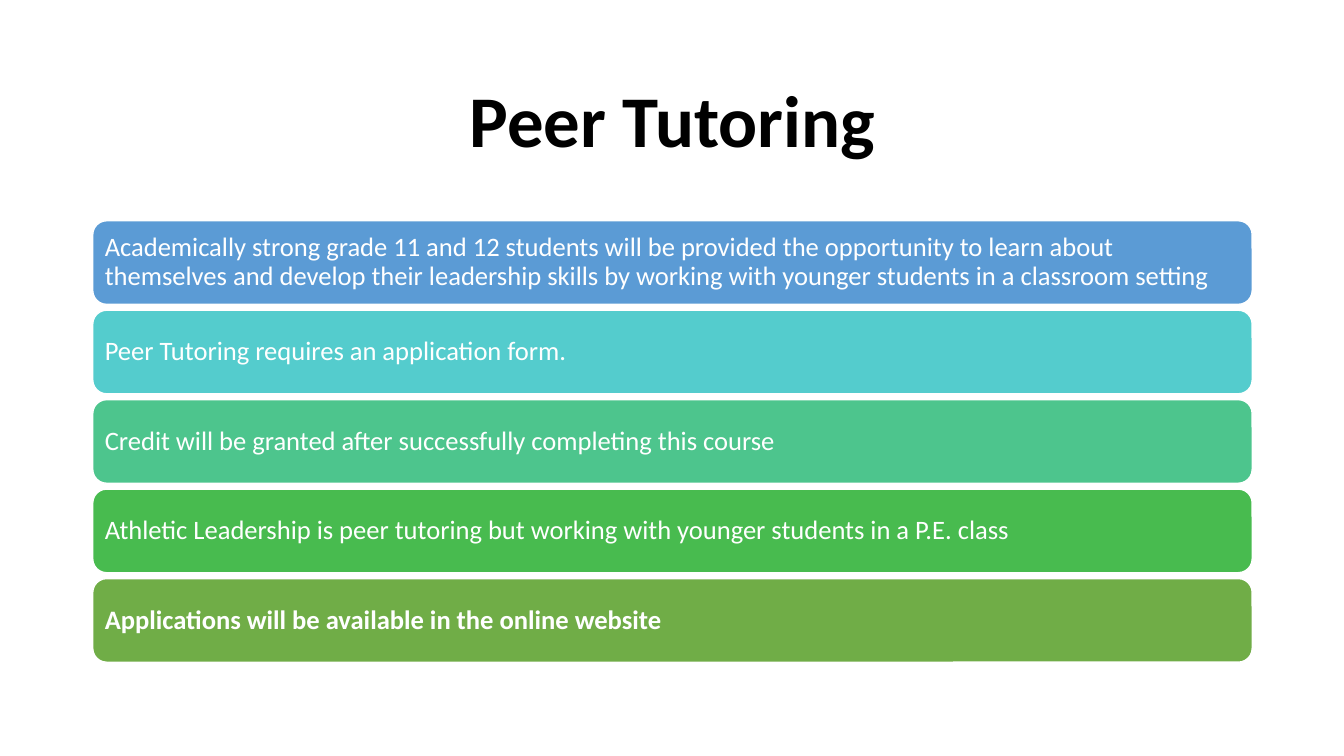
from pptx import Presentation
from pptx.dml.color import RGBColor
from pptx.enum.shapes import MSO_SHAPE
from pptx.enum.text import MSO_ANCHOR, PP_ALIGN
from pptx.util import Inches, Pt

BARS = [
    ("5B9BD5", "Academically strong grade 11 and 12 students will be provided the opportunity "
               "to learn about themselves and develop their leadership skills by working with "
               "younger students in a classroom setting"),
    ("54CCCD", "Peer Tutoring requires an application form."),
    ("4DC58D", "Credit will be granted after successfully completing this course"),
    ("48BB4F", "Athletic Leadership is peer tutoring but working with younger students in a P.E. class"),
    ("70AD47", "Applications will be available in the online website"),
]


def color(code):
    return RGBColor.from_string(code)


class Page:
    """Holds the slide, its style and the row grid that its bars sit on."""

    font = "Calibri"
    left, width = 0.92, 11.5
    grid_top, grid_bottom, bar_height = 2.19, 6.57, 0.83

    def __init__(self, deck, rows):
        self.shapes = deck.slides.add_slide(deck.slide_layouts[6]).shapes
        self.row_step = (self.grid_bottom - self.grid_top - self.bar_height) / (rows - 1)

    def set_text(self, shape, text, size, code, bold, align):
        frame = shape.text_frame
        frame.word_wrap = True
        frame.vertical_anchor = MSO_ANCHOR.MIDDLE
        para = frame.paragraphs[0]
        para.text = text
        para.alignment = align
        para.line_spacing = 0.9
        para.font.name = self.font
        para.font.size = Pt(size)
        para.font.bold = bold
        para.font.color.rgb = color(code)
        return frame

    def title(self, text):
        box = self.shapes.add_textbox(
            Inches(self.left), Inches(0.61), Inches(self.width), Inches(1.24))
        self.set_text(box, text, 52, "000000", True, PP_ALIGN.CENTER)

    def bar(self, row, fill, text, bold):
        bar = self.shapes.add_shape(
            MSO_SHAPE.ROUNDED_RECTANGLE,
            Inches(self.left), Inches(self.grid_top + row * self.row_step),
            Inches(self.width), Inches(self.bar_height))
        bar.shadow.inherit = False
        bar.fill.solid()
        bar.fill.fore_color.rgb = color(fill)
        bar.line.color.rgb = color("FFFFFF")
        bar.line.width = Pt(1)
        frame = self.set_text(bar, text, 19, "FFFFFF", bold, PP_ALIGN.LEFT)
        frame.margin_left = frame.margin_right = Inches(0.08)
        frame.margin_top = frame.margin_bottom = Inches(0.08)


def main():
    deck = Presentation()
    deck.slide_width, deck.slide_height = Inches(13.33), Inches(7.5)
    page = Page(deck, len(BARS))
    page.title("Peer Tutoring")
    for row, (fill, text) in enumerate(BARS):
        page.bar(row, fill, text, bold=row == len(BARS) - 1)
    deck.save("out.pptx")


if __name__ == "__main__":
    main()
